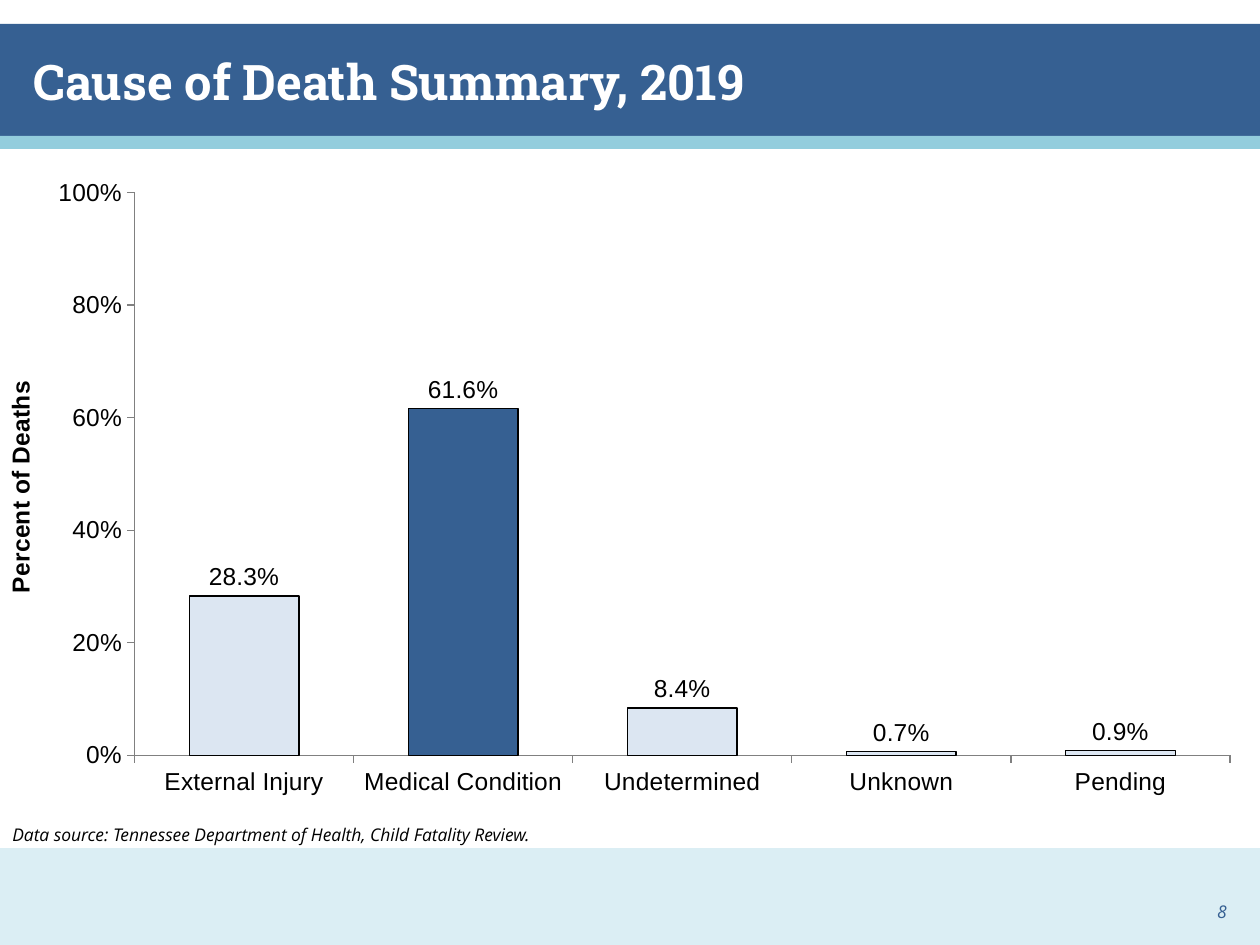
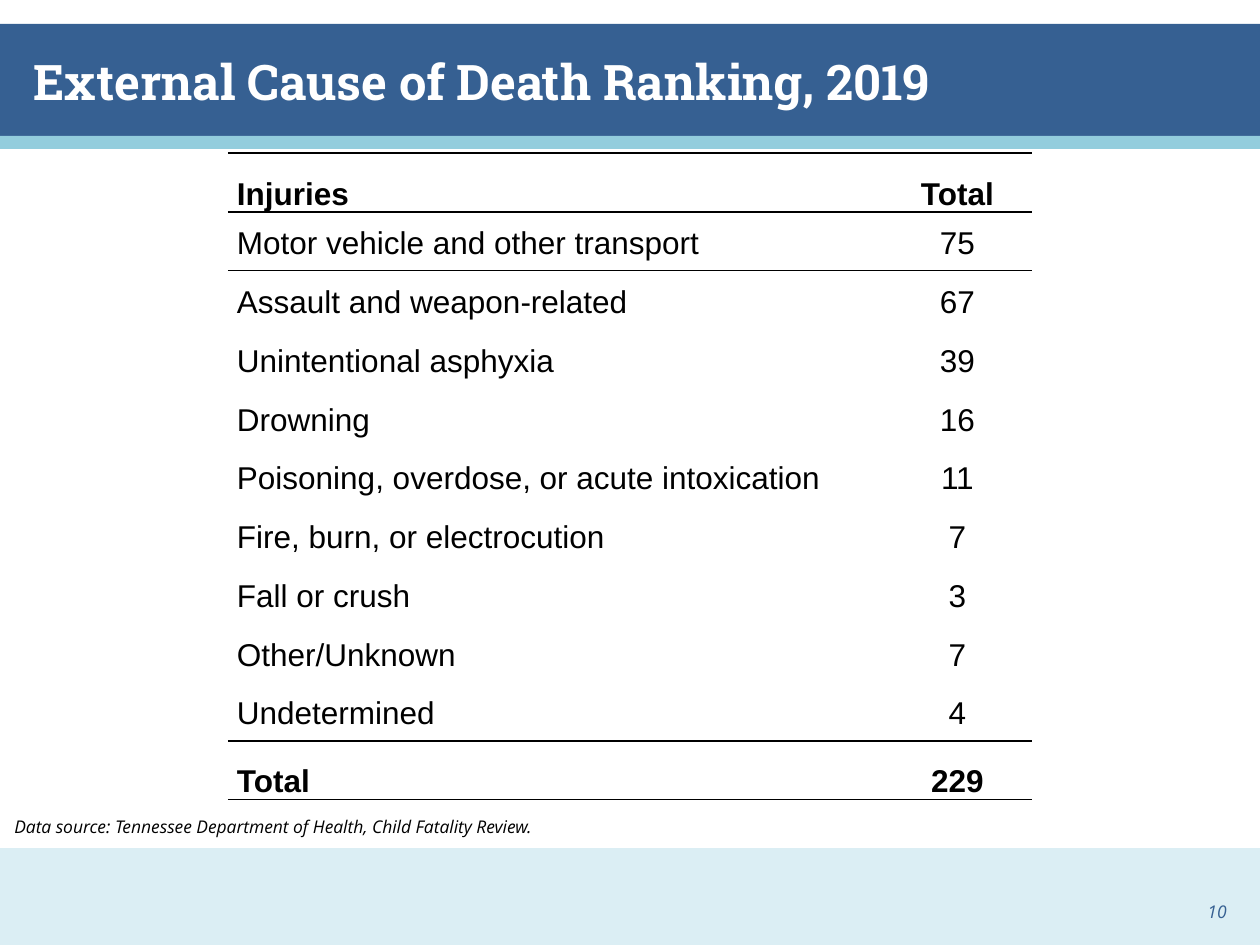
from lxml import etree
from pptx import Presentation
from pptx.chart.data import CategoryChartData
from pptx.dml.color import RGBColor
from pptx.enum.chart import XL_CHART_TYPE as CHART, XL_LABEL_POSITION as LABEL, XL_TICK_MARK as TICK
from pptx.enum.shapes import MSO_SHAPE as SHAPE
from pptx.enum.text import MSO_ANCHOR as ANCHOR, PP_ALIGN as ALIGN
from pptx.oxml import parse_xml
from pptx.oxml.ns import nsdecls, qn
from pptx.util import Pt

PX = 914400 / 126
BLUE, AQUA, PALE, BAR = "366092", "93CDDD", "DBEEF4", "DCE6F2"
BLACK, WHITE, GRAY = "000000", "FFFFFF", "808080"
SOURCE = "Data source: Tennessee Department of Health, Child Fatality Review."
rgb = RGBColor.from_string


def px(*lengths):
    return [round(n * PX) for n in lengths]


def write(tf, text, size=14, font="Arial", color=BLACK, bold=False, italic=False,
          align=ALIGN.LEFT, spacing=None):
    p = tf.paragraphs[0]
    p.alignment, p.line_spacing = align, spacing
    r = p.add_run()
    r.text = text
    r.font.size, r.font.name = Pt(size), font
    r.font.bold, r.font.italic = bold, italic
    r.font.color.rgb = rgb(color)


prs = Presentation()
prs.slide_width, prs.slide_height = px(1260, 945)

bands = [(24, 112, BLUE), (136, 13, AQUA), (848, 97, PALE)]
note = dict(size=10, font="Open Sans", italic=True)
pages = [
    ("Cause of Death Summary, 2019", "8", (0, 818, 1260, 34)),
    ("External Cause of Death Ranking, 2019", "10", (2, 810, 880, 34)),
]
slides = []
for title, number, source_box in pages:
    s = prs.slides.add_slide(prs.slide_layouts[6])
    slides.append(s)
    for top, height, color in bands:
        sp = s.shapes.add_shape(SHAPE.RECTANGLE, *px(0, top, 1260, height))
        sp.shadow.inherit = False
        sp.fill.solid()
        sp.fill.fore_color.rgb = rgb(color)
        sp.line.fill.background()
    for box, text, anchor, style in [
        ((21, 24, 1218, 113), title, ANCHOR.MIDDLE,
         dict(size=28, font="Roboto Slab", color=WHITE, bold=True)),
        ((945, 878, 294, 50), number, ANCHOR.BOTTOM,
         dict(note, color=BLUE, align=ALIGN.RIGHT)),
        (source_box, SOURCE, ANCHOR.TOP, note),
    ]:
        tf = s.shapes.add_textbox(*px(*box)).text_frame
        tf.word_wrap, tf.vertical_anchor = True, anchor
        write(tf, text, **style)

data = CategoryChartData(number_format="0.0%")
data.categories = ["External Injury", "Medical Condition", "Undetermined", "Unknown", "Pending"]
data.add_series("Series 1", [0.283, 0.616, 0.084, 0.007, 0.009])
chart = slides[0].shapes.add_chart(CHART.COLUMN_CLUSTERED, *px(0, 150, 1235, 656), data).chart
chart.has_legend = chart.has_title = False
chart.font.size, chart.font.name = Pt(14), "Arial"
chart.font.color.rgb = rgb(BLACK)

for axis in (chart.category_axis, chart.value_axis):
    axis.has_major_gridlines = False
    axis.major_tick_mark, axis.minor_tick_mark = TICK.OUTSIDE, TICK.NONE
    axis.format.line.color.rgb = rgb(GRAY)
    axis.format.line.width = Pt(0.75)
    axis.tick_labels.font.size = Pt(14)
axis = chart.value_axis
axis.minimum_scale, axis.maximum_scale, axis.major_unit = 0, 1, 0.2
axis.tick_labels.number_format, axis.tick_labels.number_format_is_linked = "0%", False
write(axis.axis_title.text_frame, "Percent of Deaths", bold=True, align=ALIGN.CENTER)

plot = chart.plots[0]
plot.gap_width, plot.overlap, plot.vary_by_categories = 100, -27, False
plot.has_data_labels = True
labels = plot.data_labels
labels.show_value, labels.position = True, LABEL.OUTSIDE_END
labels.number_format, labels.number_format_is_linked = "0.0%", False
labels.font.size, labels.font.name = Pt(14), "Arial"
labels.font.color.rgb = rgb(BLACK)
series = plot.series[0]
for fmt, color in [(series.format, BAR), (series.points[1].format, BLUE)]:
    fmt.fill.solid()
    fmt.fill.fore_color.rgb = rgb(color)
    fmt.line.color.rgb = rgb(BLACK)
    fmt.line.width = Pt(0.75)

area = chart._chartSpace.chart.plotArea
for old in area.findall(qn("c:layout")):
    area.remove(old)
layout = etree.Element(qn("c:layout"))
manual = etree.SubElement(layout, qn("c:manualLayout"))
for tag, val in [("layoutTarget", "inner"), ("xMode", "edge"), ("yMode", "edge"),
                 ("x", "0.109"), ("y", "0.065"), ("w", "0.887"), ("h", "0.858")]:
    etree.SubElement(manual, qn("c:" + tag)).set("val", val)
area.insert(0, layout)

rows = [
    ("Injuries", "Total"),
    ("Motor vehicle and other transport", "75"),
    ("Assault and weapon-related", "67"),
    ("Unintentional asphyxia", "39"),
    ("Drowning", "16"),
    ("Poisoning, overdose, or acute intoxication", "11"),
    ("Fire, burn, or electrocution", "7"),
    ("Fall or crush", "3"),
    ("Other/Unknown", "7"),
    ("Undetermined", "4"),
    ("Total", "229"),
]
last = len(rows) - 1
frame = slides[1].shapes.add_table(len(rows), 2, *px(228, 153, 804, 647))
table = frame.table
table.first_row = table.horz_banding = False
table._tbl.tblPr.find(qn("a:tableStyleId")).text = "{2D5ABB26-0587-4C30-8999-92F81FD0307C}"
for column, width in zip(table.columns, px(655, 149)):
    column.width = width
for i, row in enumerate(rows):
    ends = i in (0, last)
    for j, text in enumerate(row):
        cell = table.cell(i, j)
        cell.margin_left, cell.margin_right, cell.margin_top, cell.margin_bottom = px(9, 9, 0, 0)
        cell.vertical_anchor = ANCHOR.BOTTOM if ends else ANCHOR.MIDDLE
        write(cell.text_frame, text, size=18, bold=ends, spacing=1.15,
              align=ALIGN.CENTER if j else ALIGN.LEFT)
        for side, ruled in [("lnT", i in (0, 1, last)), ("lnB", i in (0, last - 1, last))]:
            if ruled:
                cell._tc.get_or_add_tcPr().append(parse_xml(
                    f'<a:{side} {nsdecls("a")} w="12700"><a:solidFill>'
                    f'<a:srgbClr val="{BLACK}"/></a:solidFill></a:{side}>'))
        cell.fill.background()

prs.save("out.pptx")
